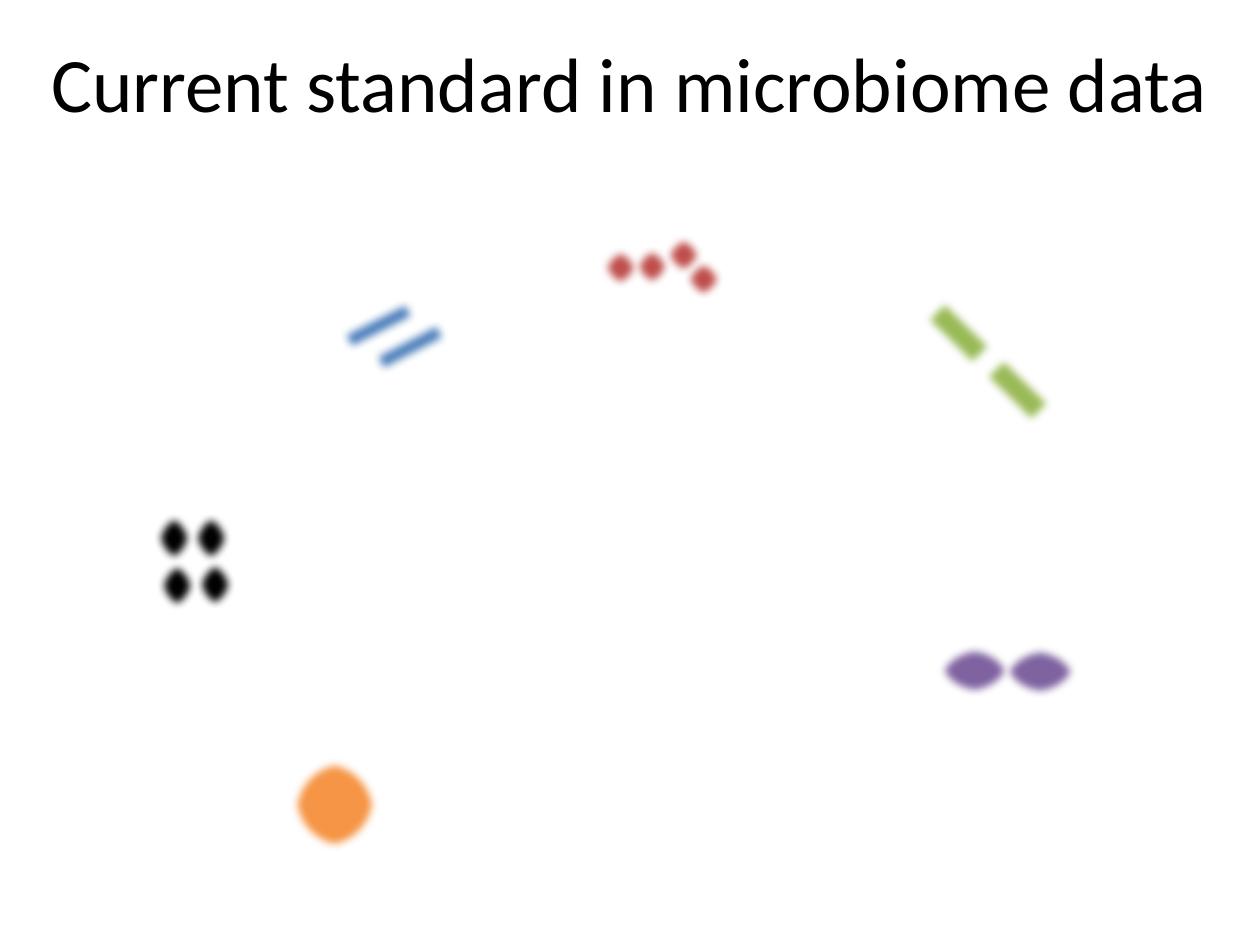
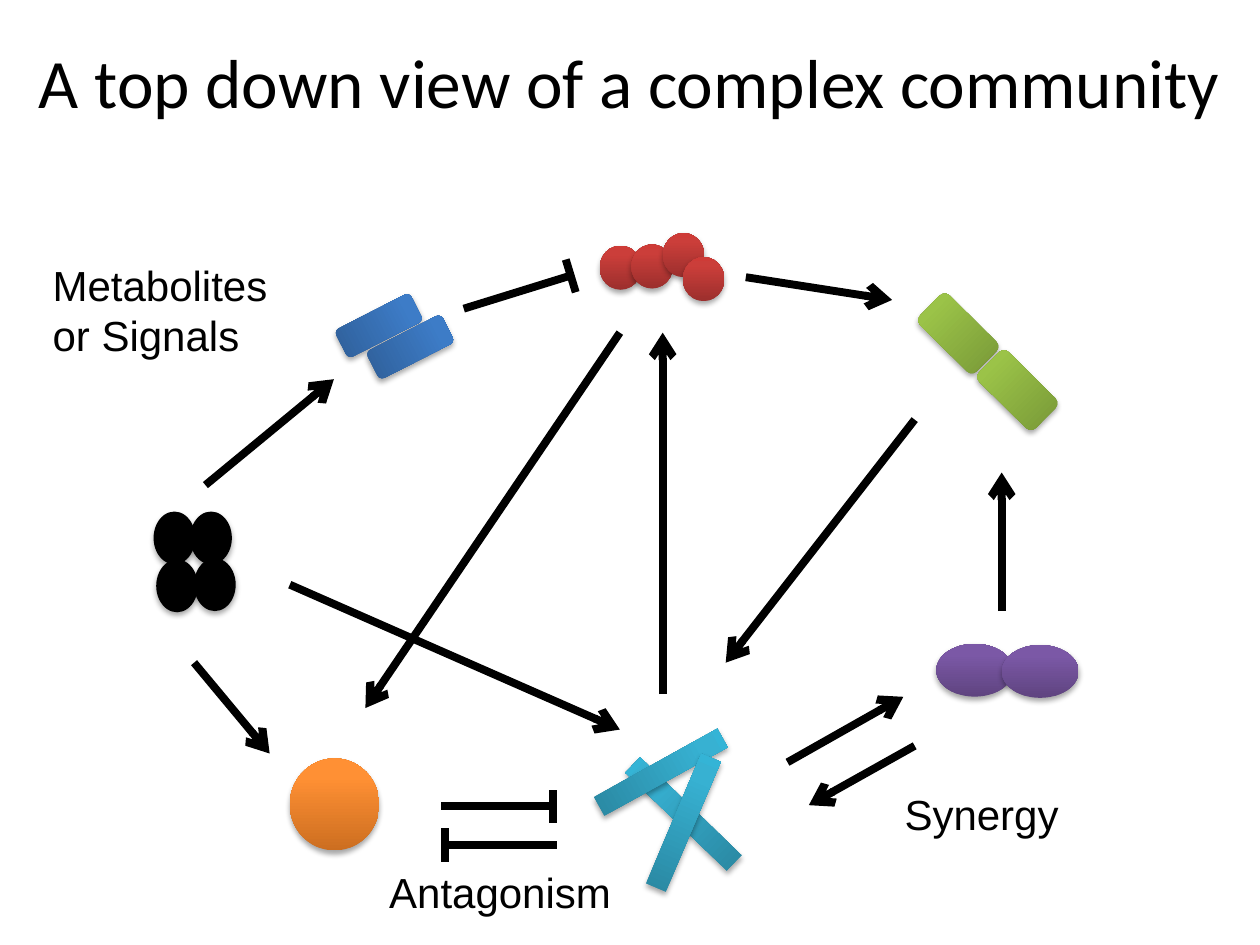
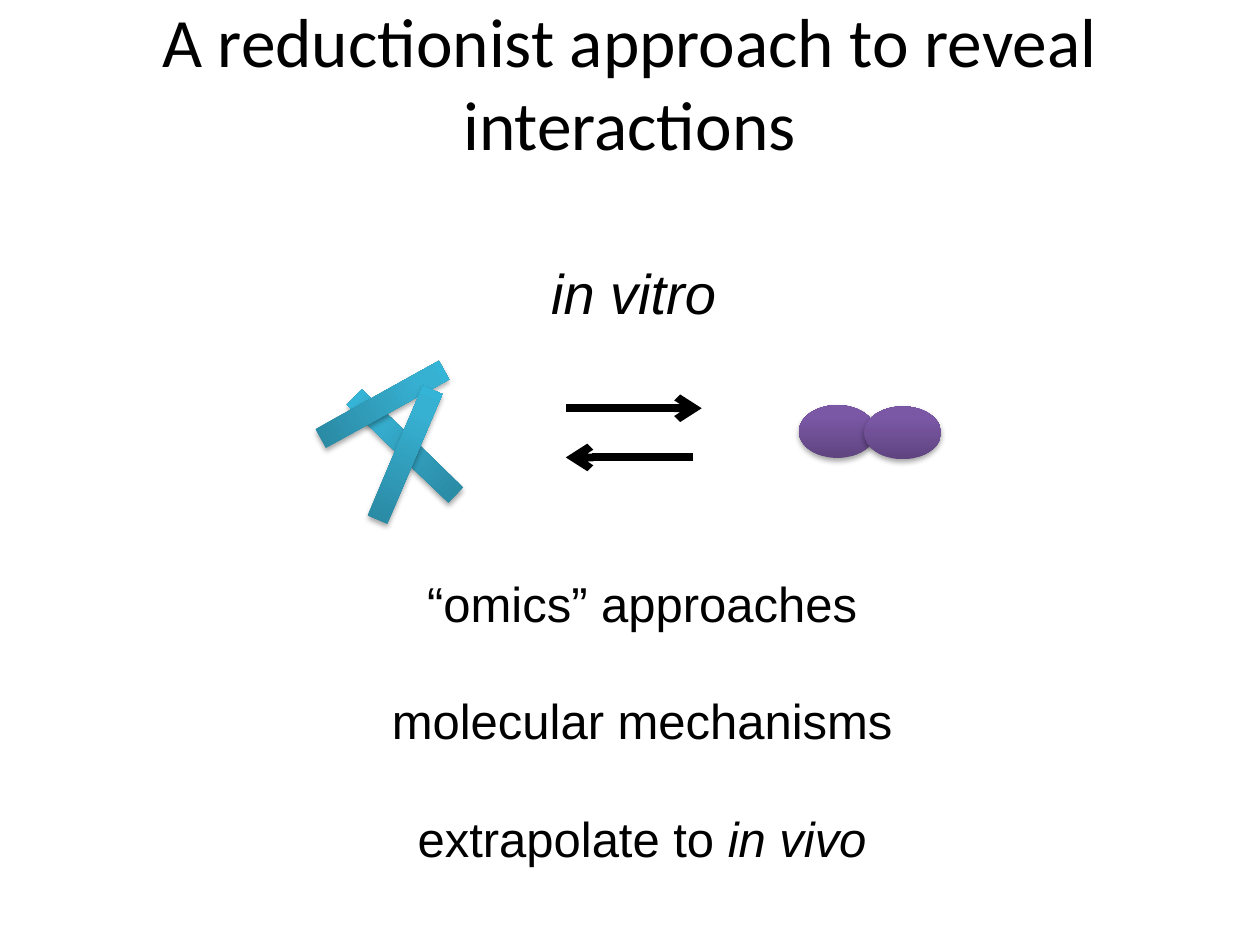
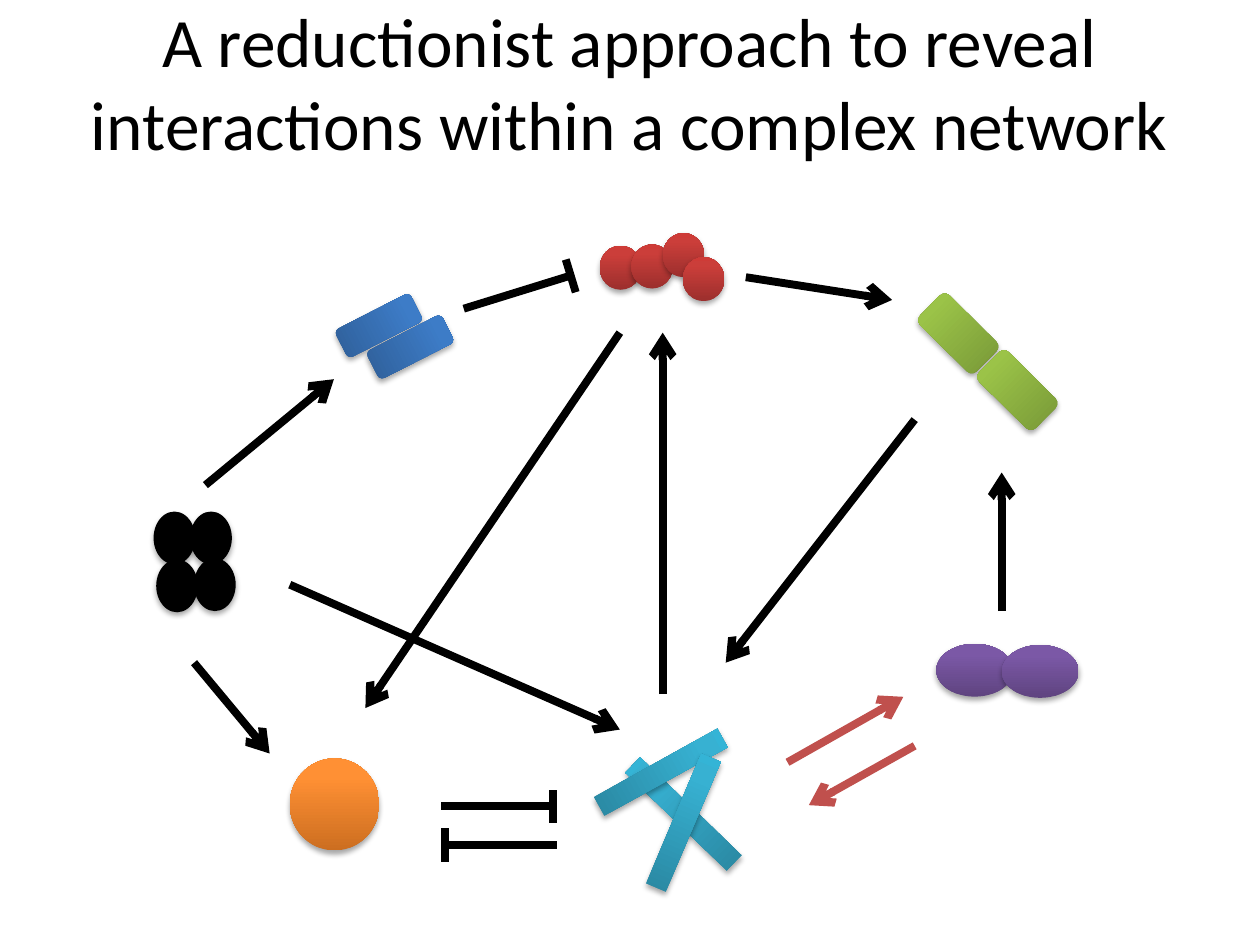
"""Build four slides on microbial communities and their interactions."""
from copy import deepcopy

from lxml.etree import SubElement
from pptx import Presentation
from pptx.dml.color import RGBColor
from pptx.enum.shapes import MSO_CONNECTOR, MSO_SHAPE
from pptx.enum.text import MSO_ANCHOR, MSO_AUTO_SIZE, PP_ALIGN
from pptx.oxml.ns import qn
from pptx.util import Pt

BLACK = RGBColor(0x00, 0x00, 0x00)
RED = RGBColor(0xC0, 0x50, 0x4D)
OVAL, ROUND, BAR = MSO_SHAPE.OVAL, MSO_SHAPE.ROUNDED_RECTANGLE, MSO_SHAPE.RECTANGLE
LEFT, MID = PP_ALIGN.LEFT, PP_ALIGN.CENTER

# microbe: preset, size, flat fill, flat edge, shaded stops, cells (left, top, turn)
MICROBES = {
    "black": (OVAL, (23.8, 30.2), BLACK, BLACK, None,
              [(87.8, 292.3, 0), (108.7, 292.3, 0), (89.3, 319.7, 0), (110.9, 319, 0)]),
    "blue": (ROUND, (18, 48.2), RGBColor(0x4F, 0x81, 0xBD), RGBColor(0x3A, 0x5F, 0x8C),
             ("2F5F99", "3D7CC7", "3A7CCB"),
             [(207.4, 162, 63), (225.4, 174.2, 63)]),
    "red": (OVAL, (23.8, 25.2), RED, RGBColor(0x8E, 0x3B, 0x39),
            ("9C2F2D", "CB3E3A", "CE3B37"),
            [(342.7, 140.4, 0), (360.7, 139.7, 0), (378.7, 133.2, 0), (390.2, 146.9, 0)]),
    "green": (ROUND, (23.8, 45.4), RGBColor(0x9B, 0xBB, 0x59), RGBColor(0x73, 0x8A, 0x42),
              ("779737", "9BC348", "9DC746"),
              [(535.7, 167.8, 314.7), (569.5, 200.2, 314.7)]),
    "purple": (OVAL, (43.9, 30.2), RGBColor(0x80, 0x64, 0xA2), RGBColor(0x5F, 0x4A, 0x78),
               ("5F4480", "7B58A6", "7C57A8"),
               [(535, 367.9, 0), (572.4, 368.6, 0)]),
    "teal": (BAR, (12.2, 80.6), RGBColor(0x4B, 0xAC, 0xC6), RGBColor(0x37, 0x7F, 0x92),
             ("2A88A2", "37B1D2", "34B4D6"),
             [(384.5, 424.8, 314), (371.5, 401, 61), (384.5, 429.8, 23)]),
    "orange": (OVAL, (51.1, 52.6), RGBColor(0xF7, 0x96, 0x46), RGBColor(0xB7, 0x6F, 0x34),
               ("CC6E20", "FF9034", "FF9136"),
               [(165.6, 433.4, 0)]),
}
BLURRED = [name for name in MICROBES if name != "teal"]
STOPS = (0, 0.8, 1)

SYNERGY = [(450, 435.6, 516.2, 398.2), (522.7, 426.2, 462.2, 460.1)]
ARROWS = [
    (572.4, 349.2, 572.4, 270), (117.4, 277.2, 190.8, 216.7),
    (110.9, 378.7, 154.1, 430.6), (426.2, 158.4, 509.8, 171.4),
    (378.7, 396.7, 378.7, 190.1), (165.6, 334.1, 354.2, 416.9),
    (354.2, 190.1, 208.8, 404.6), (522.7, 239.8, 414.7, 378.7),
]
TEES = [
    [(265, 176.4, 325.4, 157.7), (329, 167, 323.3, 148.3)],
    [(252, 460.8, 315.4, 460.8), (316.1, 470.2, 316.1, 451.4)],
    [(318.2, 483.1, 254.9, 483.1), (254.2, 492.5, 254.2, 473)],
]
PAIR = [(323.3, 233.3, 401, 233.3), (396, 261.4, 323.3, 261.4)]

# label: box, size, alignment, gap between, lines of (plain, italic)
LABELS = [
    ((215.3, 491.8, 142.6, 36), 24, LEFT, 0, [("Antagonism", "")]),
    ((509.8, 447.1, 103.7, 36), 24, LEFT, 0, [("Synergy", "")]),
    ((23, 144.7, 139, 65.5), 24, LEFT, 0, [("Metabolites", ""), ("or Signals", "")]),
]
NOTES = [
    ((307.4, 144, 109.4, 46.1), 32, MID, 0, [("", "in vitro")]),
    ((214.6, 324, 304.6, 211), 28, MID, 33.5,
     [("“omics” approaches", ""), ("molecular mechanisms", ""),
      ("extrapolate to ", "in vivo")]),
]


def start(deck, text, size=39.6):
    """Add a slide with its title and return its shapes."""
    shapes = deck.slides.add_slide(deck.slide_layouts[5]).shapes
    title = shapes.title
    title.left, title.top, title.width, title.height = map(Pt, (5.8, 2.9, 707.8, 87.1))
    frame = title.text_frame
    frame.text = text
    frame.word_wrap = True
    frame.auto_size = MSO_AUTO_SIZE.NONE
    frame.vertical_anchor = MSO_ANCHOR.MIDDLE
    para = frame.paragraphs[0]
    para.alignment = MID
    para.font.name, para.font.size = "Calibri", Pt(size)
    para.font.color.rgb = BLACK
    return shapes


def shade(cell, stops):
    """Fill a cell from dark at the foot to light at the top."""
    cell.fill.gradient()
    cell.fill.gradient_angle = 90
    chain = cell._element.spPr.find(".//" + qn("a:gsLst"))
    chain.append(deepcopy(chain[-1]))
    for stop, place, tone in zip(cell.fill.gradient_stops, STOPS, stops):
        stop.position = place
        stop.color.rgb = RGBColor.from_string(tone)


def drop(effects):
    """Add a soft shadow below."""
    shadow = SubElement(effects, qn("a:outerShdw"), blurRad="40000", dist="23000",
                        dir="5400000", rotWithShape="0")
    tone = SubElement(shadow, qn("a:srgbClr"), val="000000")
    SubElement(tone, qn("a:alpha"), val="35000")


def grow(shapes, name, blur=False, move=(0, 0)):
    """Draw the cells of one microbe, blurred or shaded."""
    kind, size, flat, edge, stops, cells = MICROBES[name]
    home = shapes.add_group_shape().shapes if name == "green" and not blur else shapes
    for left, top, turn in cells:
        cell = home.add_shape(kind, Pt(left + move[0]), Pt(top + move[1]), *map(Pt, size))
        cell.rotation = turn
        cell.shadow.inherit = False
        effects = cell._element.spPr.find(qn("a:effectLst"))
        if stops and not blur:
            shade(cell, stops)
        else:
            cell.fill.solid()
            cell.fill.fore_color.rgb = flat
        if blur:
            cell.line.color.rgb = edge
            cell.line.width = Pt(2)
            SubElement(effects, qn("a:softEdge"), rad=str(Pt(5)))
        else:
            cell.line.fill.background()
            drop(effects)


def link(shapes, ends, tone=BLACK, arrow=True):
    """Draw one thick line, with an arrowhead if wanted."""
    line = shapes.add_connector(MSO_CONNECTOR.STRAIGHT, *map(Pt, ends))
    line.line.color.rgb = tone
    line.line.width = Pt(4.5)
    props = line._element.spPr
    if arrow:
        SubElement(props.find(qn("a:ln")), qn("a:tailEnd"), type="arrow")
    SubElement(props, qn("a:effectLst"))


def label(shapes, box, size, align, gap, lines):
    """Write a text box with plain and italic runs."""
    frame = shapes.add_textbox(*map(Pt, box)).text_frame
    frame.word_wrap = False
    frame.auto_size = MSO_AUTO_SIZE.SHAPE_TO_FIT_TEXT
    for i, parts in enumerate(lines):
        para = frame.add_paragraph() if i else frame.paragraphs[0]
        para.alignment = align
        if i:
            para.space_before = Pt(gap)
        para.font.name, para.font.size = "Arial", Pt(size)
        para.font.color.rgb = BLACK
        for text, slant in zip(parts, (None, True)):
            if text:
                run = para.add_run()
                run.text = text
                run.font.italic = slant


def web(shapes, tone):
    """Draw the whole community and its links."""
    for name in MICROBES:
        grow(shapes, name)
    for ends in SYNERGY:
        link(shapes, ends, tone)
    for ends in ARROWS:
        link(shapes, ends)
    for tee in TEES:
        group = shapes.add_group_shape().shapes
        for ends in tee:
            link(group, ends, arrow=False)


def main():
    """Build and save the deck."""
    deck = Presentation()
    deck.slide_width, deck.slide_height = Pt(720), Pt(540)

    shapes = start(deck, "Current standard in microbiome data", 44)
    for name in BLURRED:
        grow(shapes, name, blur=True)

    shapes = start(deck, "A top down view of a complex community")
    web(shapes, BLACK)
    for item in LABELS:
        label(shapes, *item)

    shapes = start(deck, "A reductionist approach to reveal interactions")
    grow(shapes, "purple", move=(-78.5, -136.4))
    grow(shapes, "teal", move=(-159.1, -210.2))
    for ends in PAIR:
        link(shapes, ends)
    for item in NOTES:
        label(shapes, *item)

    shapes = start(deck, "A reductionist approach to reveal interactions within a complex network")
    web(shapes, RED)

    deck.save("out.pptx")


if __name__ == "__main__":
    main()
